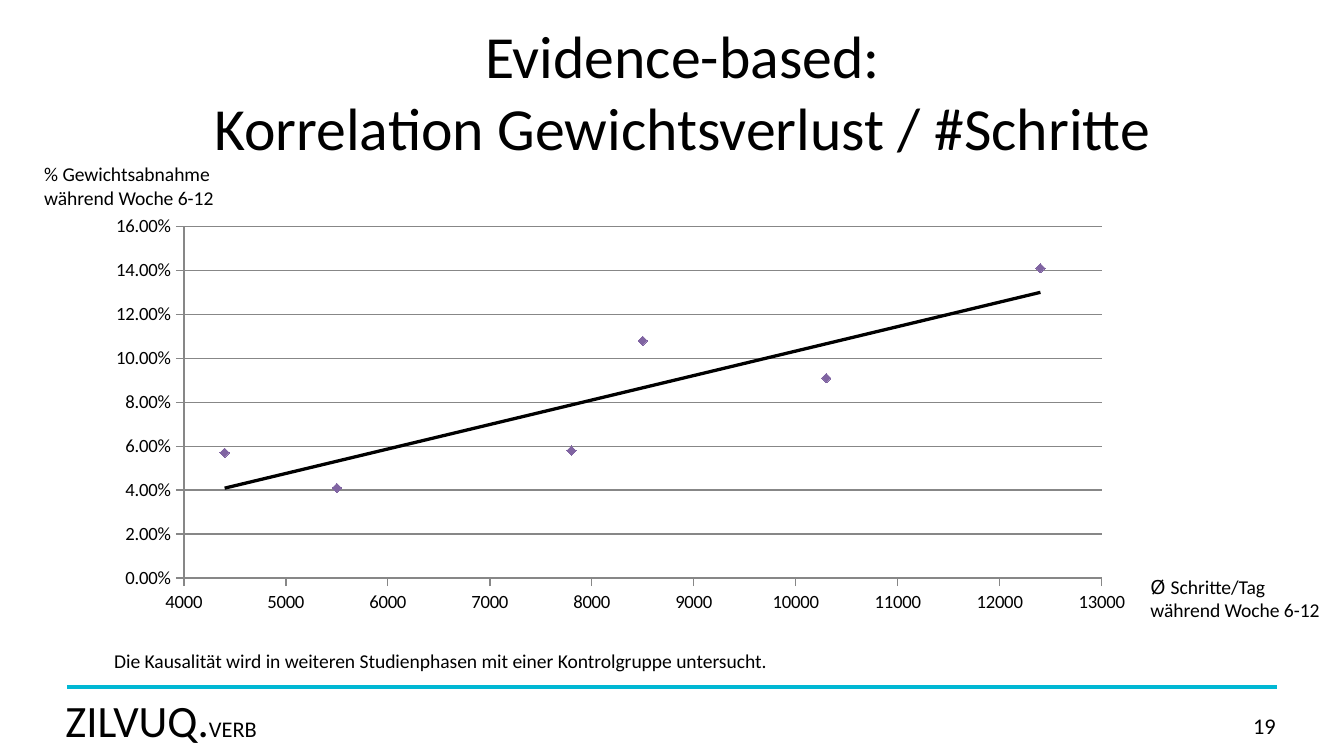
"""Builds a slide relating weight loss to daily steps with a scatter chart."""
from lxml.etree import SubElement
from pptx import Presentation
from pptx.chart.data import XyChartData
from pptx.dml.color import RGBColor
from pptx.enum.chart import XL_CHART_TYPE, XL_MARKER_STYLE, XL_TICK_MARK
from pptx.enum.shapes import MSO_CONNECTOR
from pptx.enum.text import MSO_ANCHOR, PP_ALIGN
from pptx.oxml import parse_xml
from pptx.oxml.ns import nsdecls, qn
from pptx.util import Pt

BLACK, GREY, PURPLE, TURQUOISE = "000000", "878787", "8064A2", "00B8D4"
FONT = "Calibri"
STEPS_AND_LOSS = [
    (8500, 0.108), (4400, 0.057), (7800, 0.058),
    (12400, 0.141), (10300, 0.091), (5500, 0.041),
]
PLOT_LAYOUT = {"x": 0.08, "y": 0.05, "w": 0.87, "h": 0.85}


def colour(hex_string):
    return RGBColor.from_string(hex_string)


def style_font(font, size, name=FONT):
    font.size = Pt(size)
    font.name = name
    font.color.rgb = colour(BLACK)


def style_line(line, hex_string, width):
    line.color.rgb = colour(hex_string)
    line.width = Pt(width)


def add_label(slide, box, text, size, align=PP_ALIGN.LEFT,
              anchor=MSO_ANCHOR.TOP, insets=(5, 2.7)):
    label = slide.shapes.add_textbox(*map(Pt, box))
    frame = label.text_frame
    frame.word_wrap = True
    frame.vertical_anchor = anchor
    frame.margin_left = frame.margin_right = Pt(insets[0])
    frame.margin_top = frame.margin_bottom = Pt(insets[1])
    frame.text = text
    for paragraph in frame.paragraphs:
        paragraph.alignment = align
        for run in paragraph.runs:
            style_font(run.font, size)
    return frame


def append_run(frame, text, size):
    run = frame.paragraphs[0].add_run()
    run.text = text
    style_font(run.font, size)


def add_rule(slide, left, right, y):
    rule = slide.shapes.add_connector(
        MSO_CONNECTOR.STRAIGHT, Pt(left), Pt(y), Pt(right), Pt(y))
    style_line(rule.line, TURQUOISE, 2)
    SubElement(rule.element.spPr, qn("a:effectLst"))


def style_axis(axis, low, high, step, number_format):
    axis.minimum_scale, axis.maximum_scale, axis.major_unit = low, high, step
    axis.major_tick_mark = XL_TICK_MARK.OUTSIDE
    axis.minor_tick_mark = XL_TICK_MARK.NONE
    axis.tick_labels.number_format = number_format
    axis.tick_labels.number_format_is_linked = False
    style_font(axis.tick_labels.font, 10)
    style_line(axis.format.line, GREY, 0.75)


def add_trend_line(series):
    trend = parse_xml(
        f'<c:trendline {nsdecls("c", "a")}><c:spPr><a:ln w="{Pt(1.75)}">'
        f'<a:solidFill><a:srgbClr val="{BLACK}"/></a:solidFill></a:ln></c:spPr>'
        '<c:trendlineType val="linear"/><c:dispRSqr val="0"/>'
        '<c:dispEq val="0"/></c:trendline>')
    series._element.find(qn("c:xVal")).addprevious(trend)


def place_plot(chart):
    plot_area = chart._chartSpace.chart.plotArea
    for old_layout in plot_area.findall(qn("c:layout")):
        plot_area.remove(old_layout)
    modes = '<c:xMode val="edge"/><c:yMode val="edge"/>'
    sides = "".join(f'<c:{side} val="{share}"/>' for side, share in PLOT_LAYOUT.items())
    plot_area.insert(0, parse_xml(
        f'<c:layout {nsdecls("c")}><c:manualLayout><c:layoutTarget val="inner"/>'
        f'{modes}{sides}</c:manualLayout></c:layout>'))


def add_scatter(slide, box):
    measurements = XyChartData()
    participants = measurements.add_series("Series 1")
    for steps, loss in STEPS_AND_LOSS:
        participants.add_data_point(steps, loss)
    chart = slide.shapes.add_chart(
        XL_CHART_TYPE.XY_SCATTER, *map(Pt, box), measurements).chart
    chart.has_legend = chart.has_title = False
    style_font(chart.font, 10)
    style_axis(chart.category_axis, 4000, 13000, 1000, "0")
    style_axis(chart.value_axis, 0, 0.16, 0.02, "0.00%")
    chart.category_axis.has_major_gridlines = False
    chart.value_axis.has_major_gridlines = True
    style_line(chart.value_axis.major_gridlines.format.line, GREY, 0.75)
    chart.plots[0].vary_by_categories = False
    series = chart.plots[0].series[0]
    series.smooth = False
    series.format.line.fill.background()
    series.marker.style = XL_MARKER_STYLE.DIAMOND
    series.marker.size = 5
    series.marker.format.fill.solid()
    series.marker.format.fill.fore_color.rgb = colour(PURPLE)
    style_line(series.marker.format.line, PURPLE, 0.75)
    add_trend_line(series)
    place_plot(chart)


def main():
    presentation = Presentation()
    presentation.slide_width, presentation.slide_height = Pt(720), Pt(405)
    slide = presentation.slides.add_slide(presentation.slide_layouts[6])

    add_rule(slide, 36, 684, 368)
    organisation = add_label(slide, (28, 368.5, 166, 34), "ZILVUQ.", 24,
                             anchor=MSO_ANCHOR.MIDDLE, insets=(7.2, 3.6))
    append_run(organisation, "VERB", 12)
    add_label(slide, (522.5, 378, 168, 21.6), "19", 12,
              align=PP_ALIGN.RIGHT, insets=(7.2, 3.6))
    add_label(slide, (18.7, 13, 694, 71.3),
              "Evidence-based:\nKorrelation Gewichtsverlust / #Schritte", 32,
              align=PP_ALIGN.CENTER, anchor=MSO_ANCHOR.MIDDLE, insets=(3.6, 3.6))
    add_label(slide, (56.2, 345, 513, 19),
              "Die Kausalität wird in weiteren Studienphasen mit einer "
              "Kontrolgruppe untersucht.", 10.5)
    add_scatter(slide, (53.3, 110.2, 565.2, 221.8))
    steps_label = add_label(slide, (611.3, 305.3, 108.7, 31), "Ø ", 10.5)
    style_font(steps_label.paragraphs[0].runs[0].font, 10.5, "Noto Sans")
    append_run(steps_label, "Schritte/Tag während Woche 6-12", 10.5)
    add_label(slide, (18.7, 84.2, 108.7, 31),
              "% Gewichtsabnahme während Woche 6-12", 10.5)

    presentation.save("out.pptx")


if __name__ == "__main__":
    main()
